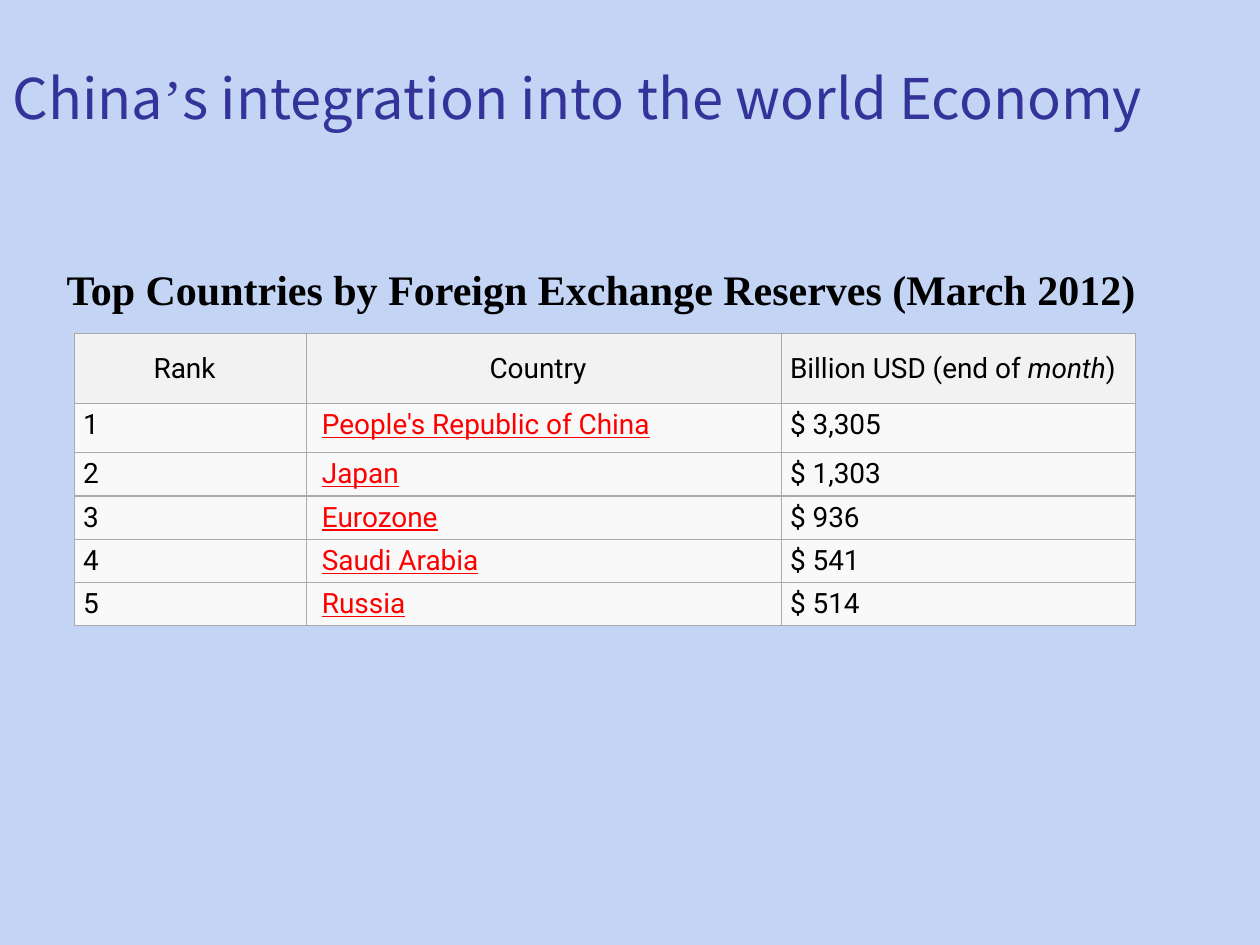
import pptx
import pptx.dml.color
import pptx.enum.text
import pptx.oxml
import pptx.oxml.ns
import pptx.util

Pt = pptx.util.Pt
ALIGN = pptx.enum.text.PP_ALIGN
ANCHOR = pptx.enum.text.MSO_ANCHOR

COLORS = {
    "page": "C4D4F5",
    "title": "333399",
    "text": "000000",
    "link": "FF0000",
    "head": "F2F2F2",
    "body": "F9F9F9",
    "rule": "AAAAAA",
}
SANS, SERIF, CJK = "Roboto", "Times New Roman", "Noto Sans CJK SC"

COLS = [132.5, 271.5, 202.5]
ROWS = [40, 28, 22, 22, 22, 22]
RANKS = [
    ("People's Republic of China", "$ 3,305"),
    ("Japan", "$ 1,303"),
    ("Eurozone", "$ 936"),
    ("Saudi Arabia", "$ 541"),
    ("Russia", "$ 514"),
]


def rgb(name):
    return pptx.dml.color.RGBColor.from_string(COLORS[name])


def add_run(para, text, size=16, face=SANS, color="text", **style):
    """Add one run; style holds font flags such as bold or underline."""
    run = para.add_run()
    run.text = text
    font = run.font
    font.size, font.name = Pt(size), face
    font.color.rgb = rgb(color)
    for key, value in style.items():
        setattr(font, key, value)


def add_box(slide, left, top, width, height, anchor=ANCHOR.TOP):
    """Add a wrapping text box and return its first paragraph."""
    box = slide.shapes.add_textbox(Pt(left), Pt(top), Pt(width), Pt(height))
    frame = box.text_frame
    frame.word_wrap = True
    frame.vertical_anchor = anchor
    return frame.paragraphs[0]


def add_rules(cell):
    """Draw a thin line on all four sides of a cell."""
    props = cell._tc.get_or_add_tcPr()
    for spot, side in enumerate(("lnL", "lnR", "lnT", "lnB")):
        line = pptx.oxml.parse_xml(
            f'<a:{side} {pptx.oxml.ns.nsdecls("a")} w="{Pt(0.75)}"><a:solidFill>'
            f'<a:srgbClr val="{COLORS["rule"]}"/></a:solidFill></a:{side}>'
        )
        props.insert(spot, line)


def style_cell(cell, fill, right=5, anchor=ANCHOR.MIDDLE):
    """Set fill, margins and lines, and return the first paragraph."""
    cell.fill.solid()
    cell.fill.fore_color.rgb = rgb(fill)
    cell.margin_left, cell.margin_right = Pt(5), Pt(right)
    cell.margin_top = cell.margin_bottom = Pt(2.75)
    cell.vertical_anchor = anchor
    add_rules(cell)
    return cell.text_frame.paragraphs[0]


def fill_head(table):
    heads = [
        [("Rank", False)],
        [("Country", False)],
        [("Billion USD (end of ", False), ("month", True), (")", False)],
    ]
    for col, runs in enumerate(heads):
        para = style_cell(table.cell(0, col), "head", right=11.5)
        para.alignment = ALIGN.CENTER
        for text, slant in runs:
            add_run(para, text, italic=slant)


def fill_body(table):
    for rank, (land, sum_usd) in enumerate(RANKS, 1):
        anchor = ANCHOR.TOP if rank == 1 else ANCHOR.MIDDLE
        first, mid, last = (
            style_cell(table.cell(rank, col), "body", anchor=anchor)
            for col in range(3)
        )
        add_run(first, str(rank))
        add_run(mid, " ")
        add_run(mid, land, color="link", underline=True)
        add_run(last, sum_usd)


def add_ranks(slide, left, top):
    frame = slide.shapes.add_table(
        len(ROWS), len(COLS), Pt(left), Pt(top), Pt(sum(COLS)), Pt(sum(ROWS))
    )
    table = frame.table
    for col, width in zip(table.columns, COLS):
        col.width = Pt(width)
    for row, height in zip(table.rows, ROWS):
        row.height = Pt(height)
    fill_head(table)
    fill_body(table)


def main():
    deck = pptx.Presentation()
    deck.slide_width, deck.slide_height = Pt(720), Pt(540)
    slide = deck.slides.add_slide(deck.slide_layouts[6])
    slide.background.fill.solid()
    slide.background.fill.fore_color.rgb = rgb("page")

    title = add_box(slide, 0, 18, 738, 60, ANCHOR.BOTTOM)
    for text, face in (
        ("China", CJK),
        ("’", SERIF),
        ("s integration into the world Economy", CJK),
    ):
        add_run(title, text, 32, face, "title")

    add_ranks(slide, 42.5, 190.75)

    label = add_box(slide, 31, 147, 635, 36)
    add_run(label, "Top Countries by Foreign Exchange Reserves (March 2012)",
            24, SERIF, bold=True)
    deck.save("out.pptx")


if __name__ == "__main__":
    main()
